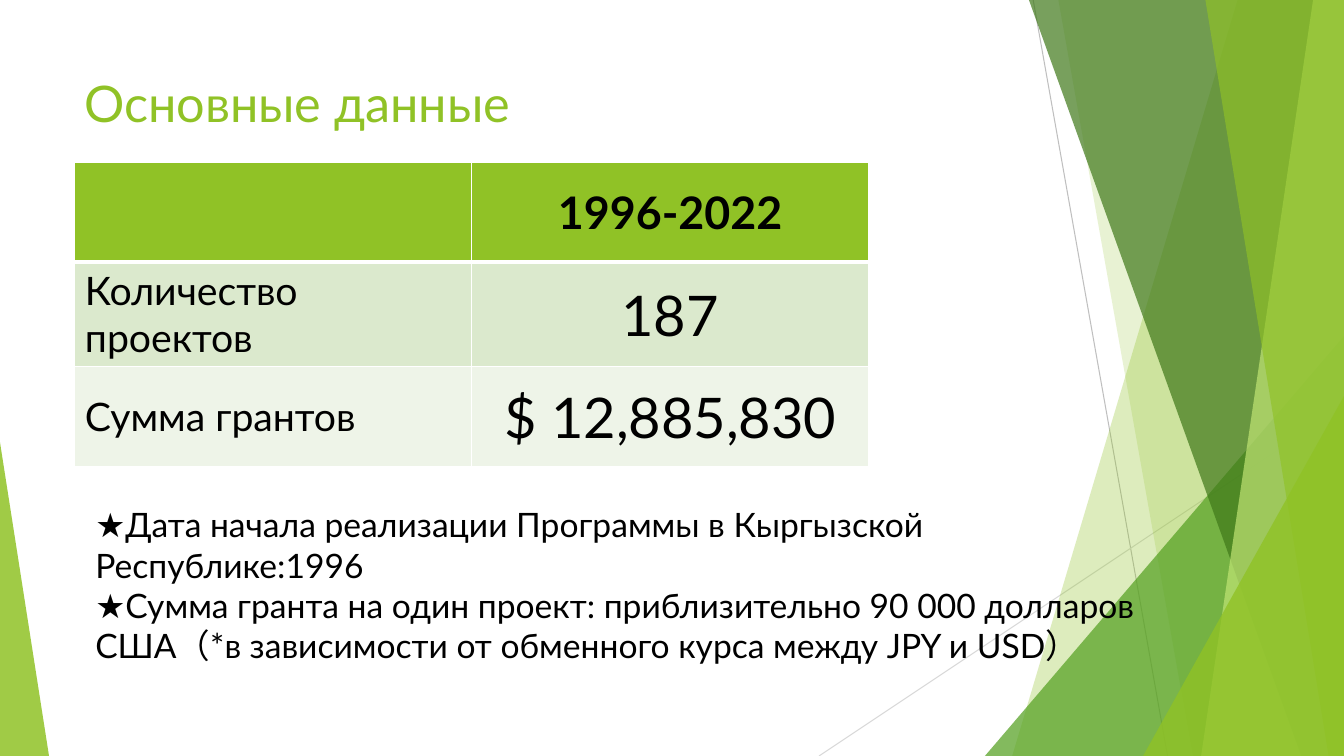
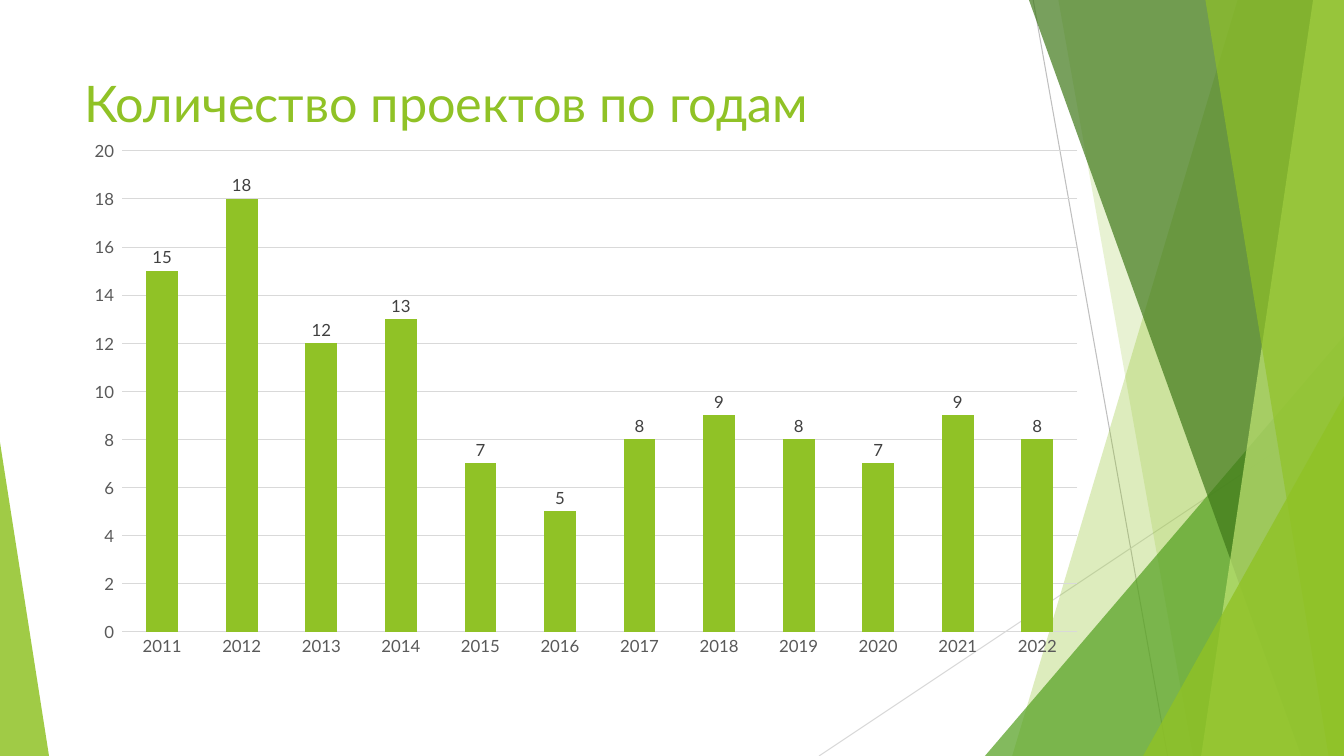
from lxml.etree import SubElement
from pptx import Presentation
from pptx.chart.data import CategoryChartData
from pptx.dml.color import RGBColor
from pptx.enum.chart import XL_CHART_TYPE as CHART, XL_LABEL_POSITION as LABEL
from pptx.enum.chart import XL_TICK_MARK as TICK
from pptx.enum.shapes import MSO_CONNECTOR as CONN, MSO_SHAPE as SHAPE
from pptx.enum.text import MSO_ANCHOR as ANCHOR, PP_ALIGN as ALIGN
from pptx.oxml import parse_xml
from pptx.oxml.ns import nsdecls, qn
from pptx.util import Pt

W, H = 960, 540
FONT = "Lato"
GREEN, MID, DARK, LIGHT = "90C226", "54A021", "3F7819", "C0E474"
BLACK, WHITE, GRID = "000000", "FFFFFF", "D9D9D9"
ROW_FILLS = [GREEN, "DBE9CD", "EEF4E8"]

# Hairlines: start x, y, end x, y, colour
HAIRLINES = [(738, 0, 834, H, "BFBFBF"), (W, 290, 585, H, GRID)]
# Translucent pieces from back to front.
# band: x of the left edge at top and bottom; triangle: left, top, width, apex
PIECES = [
    ("band", (884, 723), GREEN, 30),
    ("band", (756, 852), GREEN, 20),
    ("triangle", (703.5, 240, 256.5, 1), MID, 72),
    ("band", (735, 929.5), DARK, 70),
    ("band", (938, 858), LIGHT, 70),
    ("band", (861, 949), GREEN, 65),
    ("triangle", (816.5, 283, 143.5, 1), GREEN, 80),
    ("triangle", (0, 316, 35, 0), GREEN, 85),
]


def rgb(value):
    return RGBColor.from_string(value)


def style_font(font, size, color):
    font.name, font.size = FONT, Pt(size)
    font.color.rgb = rgb(color)


def write(tf, text, size=24, color=BLACK, bold=False, align=ALIGN.LEFT):
    """Fill a text frame, one paragraph for each line of text."""
    tf.word_wrap = True
    for i, line in enumerate(text.split("\n")):
        p = tf.add_paragraph() if i else tf.paragraphs[0]
        p.alignment = align
        r = p.add_run()
        r.text = line
        style_font(r.font, size, color)
        r.font.bold = bold


def set_borders(cell, bottom):
    """Draw white cell borders; only the bottom width varies."""
    tc_pr = cell._tc.get_or_add_tcPr()
    widths = {"lnL": 1, "lnR": 1, "lnT": 1, "lnB": bottom}
    for i, (tag, width) in enumerate(widths.items()):
        tc_pr.insert(i, parse_xml(
            f'<a:{tag} {nsdecls("a")} w="{Pt(width)}"><a:solidFill>'
            f'<a:srgbClr val="{WHITE}"/></a:solidFill></a:{tag}>'))


class Deck:
    def __init__(self):
        self.prs = Presentation()
        self.prs.slide_width, self.prs.slide_height = Pt(W), Pt(H)
        self.s = None

    # Shared frame of every slide
    def slide(self, title):
        self.s = self.prs.slides.add_slide(self.prs.slide_layouts[6])
        for *ends, color in HAIRLINES:
            self.line(ends, color)
        for kind, geometry, color, opacity in PIECES:
            getattr(self, kind)(*geometry, color, opacity)
        self.text(title, 53, 48, 677, 55, size=36, color=GREEN)

    def line(self, ends, color):
        c = self.s.shapes.add_connector(CONN.STRAIGHT, *map(Pt, ends))
        c.line.color.rgb = rgb(color)
        c.line.width = Pt(0.75)
        SubElement(c.element.spPr, qn("a:effectLst"))

    def paint(self, sp, color, opacity):
        sp.shadow.inherit = False
        sp.line.fill.background()
        sp.fill.solid()
        sp.fill.fore_color.rgb = rgb(color)
        clr = sp.element.spPr.find(qn("a:solidFill")).find(qn("a:srgbClr"))
        SubElement(clr, qn("a:alpha"), val=str(opacity * 1000))

    def band(self, top, bottom, color, opacity):
        fb = self.s.shapes.build_freeform(Pt(top), 0)
        corners = [(W, 0), (W, H), (bottom, H)]
        fb.add_line_segments([(Pt(x), Pt(y)) for x, y in corners])
        self.paint(fb.convert_to_shape(), color, opacity)

    def triangle(self, x, y, w, apex, color, opacity):
        sp = self.s.shapes.add_shape(
            SHAPE.ISOSCELES_TRIANGLE, Pt(x), Pt(y), Pt(w), Pt(H - y))
        sp.adjustments[0] = apex
        self.paint(sp, color, opacity)

    def text(self, text, x, y, w, h, **fmt):
        sp = self.s.shapes.add_textbox(Pt(x), Pt(y), Pt(w), Pt(h))
        write(sp.text_frame, text, **fmt)

    def table(self, rows, x, y, col_w, row_h):
        n_rows, n_cols = len(rows), len(rows[0])
        table = self.s.shapes.add_table(
            n_rows, n_cols, Pt(x), Pt(y),
            Pt(col_w * n_cols), Pt(row_h * n_rows)).table
        table.horz_banding = False
        for col in table.columns:
            col.width = Pt(col_w)
        for i, row in enumerate(rows):
            table.rows[i].height = Pt(row_h)
            for j, value in enumerate(row):
                cell = table.cell(i, j)
                cell.fill.solid()
                cell.fill.fore_color.rgb = rgb(ROW_FILLS[i])
                set_borders(cell, bottom=1 if i else 3)
                cell.vertical_anchor = ANCHOR.MIDDLE
                if value:
                    size = 32 if i == 0 else 40 if j else 28
                    write(cell.text_frame, value, size=size, bold=i == 0,
                          align=ALIGN.CENTER if j else ALIGN.LEFT)

    def column_chart(self, cats, vals, x, y, w, h):
        data = CategoryChartData()
        data.categories = cats
        data.add_series("Series 1", vals)
        chart = self.s.shapes.add_chart(
            CHART.COLUMN_CLUSTERED, Pt(x), Pt(y), Pt(w), Pt(h), data).chart
        chart.has_title = chart.has_legend = False
        style_font(chart.font, 10, BLACK)
        # Clear background, so the bands show through
        chart.element.find(qn("c:chart")).addnext(parse_xml(
            f'<c:spPr {nsdecls("c", "a")}><a:noFill/>'
            '<a:ln><a:noFill/></a:ln></c:spPr>'))

        # Columns and their labels
        plot = chart.plots[0]
        plot.gap_width = 150
        plot.vary_by_categories = False
        fill = plot.series[0].format.fill
        fill.solid()
        fill.fore_color.rgb = rgb(GREEN)
        plot.has_data_labels = True
        labels = plot.data_labels
        labels.show_value = True
        labels.position = LABEL.OUTSIDE_END
        style_font(labels.font, 12, "404040")

        # Axes
        cat, val = chart.category_axis, chart.value_axis
        for axis in (cat, val):
            axis.major_tick_mark = axis.minor_tick_mark = TICK.NONE
            style_font(axis.tick_labels.font, 12, "595959")
        val.minimum_scale, val.maximum_scale, val.major_unit = 0, 20, 2
        val.tick_labels.number_format = r"#,##0_);[Red]\(#,##0\)"
        val.tick_labels.number_format_is_linked = False
        val.format.line.fill.background()
        for line in (cat.format.line, val.major_gridlines.format.line):
            line.color.rgb = rgb(GRID)
            line.width = Pt(0.75)


def main():
    deck = Deck()

    # Key figures
    deck.slide("Основные данные")
    deck.table([["", "1996-2022"],
                ["Количество проектов", "187"],
                ["Сумма грантов", "$ 12,885,830"]], 53.5, 116, 283.5, 71.3)
    deck.text("★Дата начала реализации Программы в Кыргызской "
              "Республике:1996\n"
              "★Сумма гранта на один проект: приблизительно 90 000 долларов "
              "США（*в зависимости от обменного курса между JPY и USD）",
              61, 356.5, 757, 168)

    # Projects by year
    deck.slide("Количество проектов по годам")
    deck.column_chart([str(year) for year in range(2011, 2023)],
                      [15, 18, 12, 13, 7, 5, 8, 9, 8, 7, 9, 8],
                      53, 93, 731, 383)

    deck.prs.save("out.pptx")


if __name__ == "__main__":
    main()
